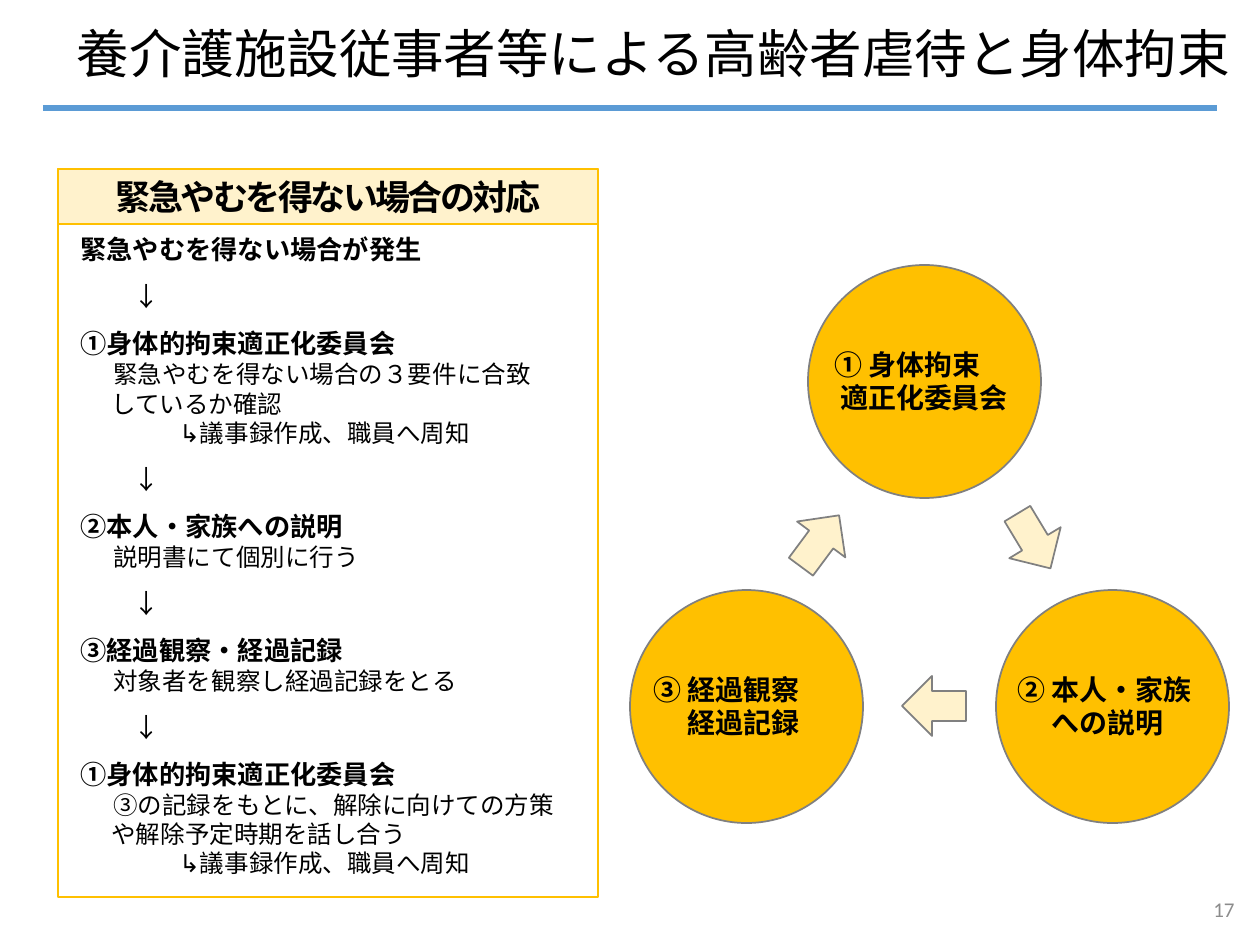
from lxml.etree import SubElement
from pptx import Presentation
from pptx.dml.color import RGBColor
from pptx.enum.shapes import MSO_CONNECTOR, MSO_SHAPE
from pptx.enum.text import MSO_ANCHOR, MSO_AUTO_SIZE, PP_ALIGN
from pptx.oxml.ns import qn
from pptx.util import Pt

PX = 914400 / 126
SANS = "Noto Sans CJK JP"
COLOR = {"ink": "000000", "gray": "8C8C8C", "edge": "808080",
         "gold": "FFC000", "cream": "FFF2CC", "blue": "5B9BD5"}

# Format of each kind of line in the procedure
STYLES = {
    "start": dict(size=15, bold=True),
    "head": dict(size=15, bold=True, space=1.5),
    "down": dict(size=15, indent=53, space=1.5),
    "body": dict(size=14, indent=33),
    "more": dict(size=14, indent=31),
    "note": dict(size=14, indent=99),
}
STEPS = [
    ("start", "緊急やむを得ない場合が発生"),
    ("down", "↓"),
    ("head", "①身体的拘束適正化委員会"),
    ("body", "緊急やむを得ない場合の３要件に合致"),
    ("more", "しているか確認"),
    ("note", "↳議事録作成、職員へ周知"),
    ("down", "↓"),
    ("head", "②本人・家族への説明"),
    ("body", "説明書にて個別に行う"),
    ("down", "↓"),
    ("head", "③経過観察・経過記録"),
    ("body", "対象者を観察し経過記録をとる"),
    ("down", "↓"),
    ("head", "①身体的拘束適正化委員会"),
    ("body", "③の記録をもとに、解除に向けての方策"),
    ("more", "や解除予定時期を話し合う"),
    ("note", "↳議事録作成、職員へ周知"),
]
# Circle left and top, label inset, indent of second line, label lines
STAGES = [
    (178, 0, 14, 6, ("① 身体拘束", "適正化委員会")),
    (366, 325, 9, 34, ("② 本人・家族", "への説明")),
    (0, 325, 11, 34, ("③ 経過観察", "経過記録")),
]
# Arrow left, top and turn
ARROWS = [(374, 244, 328.9), (274, 409, 90), (160, 244, 216.6)]


def emu(*vals):
    return [round(v * PX) for v in vals]


def rgb(key):
    return RGBColor.from_string(COLOR[key])


def write(frame, text, size=15, bold=False, color="ink", font=SANS,
          align=PP_ALIGN.LEFT, indent=0, space=1.0, track=0):
    """Put text in the frame's first paragraph, or in a new one if that is used."""
    para = frame.paragraphs[0]
    if para.runs:
        para = frame.add_paragraph()
    para.alignment = align
    para.line_spacing = space
    if indent:
        para._p.get_or_add_pPr().set("marL", str(emu(indent)[0]))
    run = para.add_run()
    run.text = text
    run.font.size, run.font.bold, run.font.name = Pt(size), bold, font
    run.font.color.rgb = rgb(color)
    props = run._r.get_or_add_rPr()
    if track:
        props.set("spc", str(track))
    SubElement(props, qn("a:ea")).set("typeface", font)


def add_text(slide, *box, anchor=MSO_ANCHOR.TOP):
    frame = slide.shapes.add_textbox(*emu(*box)).text_frame
    frame.word_wrap = True
    frame.vertical_anchor = anchor
    return frame


def add_form(slide, kind, *box, fill=None, line="edge", width=1):
    form = slide.shapes.add_shape(kind, *emu(*box))
    form.shadow.inherit = False
    if fill:
        form.fill.solid()
        form.fill.fore_color.rgb = rgb(fill)
    else:
        form.fill.background()
    form.line.color.rgb = rgb(line)
    form.line.width = Pt(width)
    return form


def add_title(slide, left, top, width, height):
    title = slide.shapes.title
    title.left, title.top, title.width, title.height = emu(left, top, width, height)
    frame = title.text_frame
    frame.word_wrap = True
    frame.auto_size = MSO_AUTO_SIZE.NONE
    frame.vertical_anchor = MSO_ANCHOR.MIDDLE
    write(frame, "養介護施設従事者等による高齢者虐待と身体拘束",
          size=30, indent=64, space=0.9)
    rule = slide.shapes.add_connector(
        MSO_CONNECTOR.STRAIGHT, *emu(left + 43, 108, left + width - 43, 108))
    rule.line.color.rgb = rgb("blue")
    rule.line.width = Pt(3.25)
    SubElement(rule._element.spPr, qn("a:effectLst"))


def add_panel(slide, left, top, width, height):
    bar = 55
    frame = add_text(slide, left + 10, top + bar + 3, width - 14, height - bar - 3)
    for style, text in STEPS:
        write(frame, text, **STYLES[style])
    head = add_form(slide, MSO_SHAPE.RECTANGLE, left, top, width, bar,
                    fill="cream", line="gold", width=1.5)
    head.text_frame.vertical_anchor = MSO_ANCHOR.MIDDLE
    write(head.text_frame, "緊急やむを得ない場合の対応", size=20, bold=True,
          align=PP_ALIGN.CENTER, track=-150)
    border = add_form(slide, MSO_SHAPE.ROUNDED_RECTANGLE, left, top, width, height,
                      line="gold", width=1.5)
    border.adjustments[0] = 0


def add_cycle(slide, left, top):
    size = 233
    for x, y, inset, indent, (first, second) in STAGES:
        x, y = left + x, top + y
        add_form(slide, MSO_SHAPE.OVAL, x, y, size, size, fill="gold")
        frame = add_text(slide, x + inset, y + 76, 230, 80)
        write(frame, first, size=16, bold=True)
        write(frame, second, size=16, bold=True, indent=indent)
    for x, y, turn in ARROWS:
        arrow = add_form(slide, MSO_SHAPE.DOWN_ARROW, left + x, top + y, 60, 64,
                         fill="cream")
        arrow.rotation = turn


def add_number(slide, *box):
    frame = add_text(slide, *box, anchor=MSO_ANCHOR.MIDDLE)
    write(frame, "17", size=12, color="gray", font="Calibri", align=PP_ALIGN.RIGHT)


def main():
    deck = Presentation()
    deck.slide_width, deck.slide_height = emu(1260, 945)
    slide = deck.slides.add_slide(deck.slide_layouts[5])
    add_title(slide, 0, 3, 1260, 108)
    add_panel(slide, 58, 169, 540, 728)
    add_cycle(slide, 630, 265)
    add_number(slide, 964, 884, 283, 50)
    deck.save("out.pptx")


if __name__ == "__main__":
    main()
